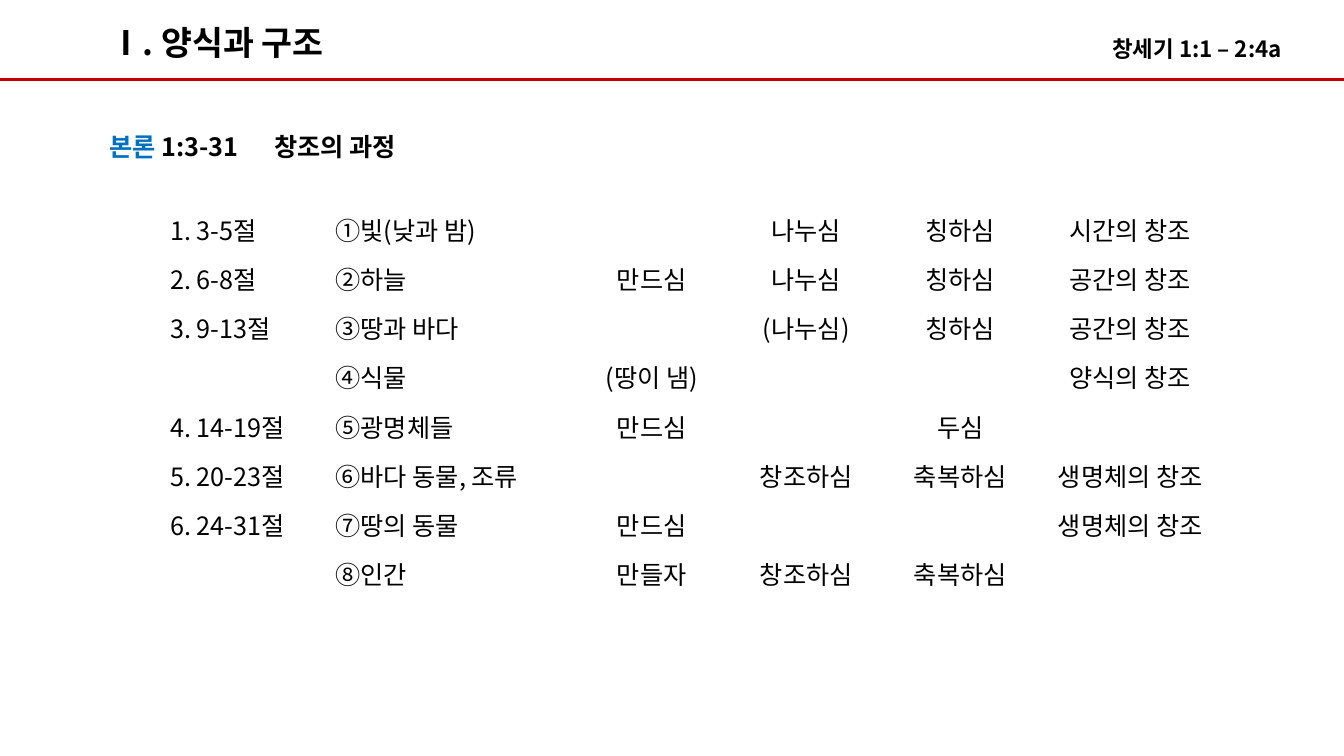
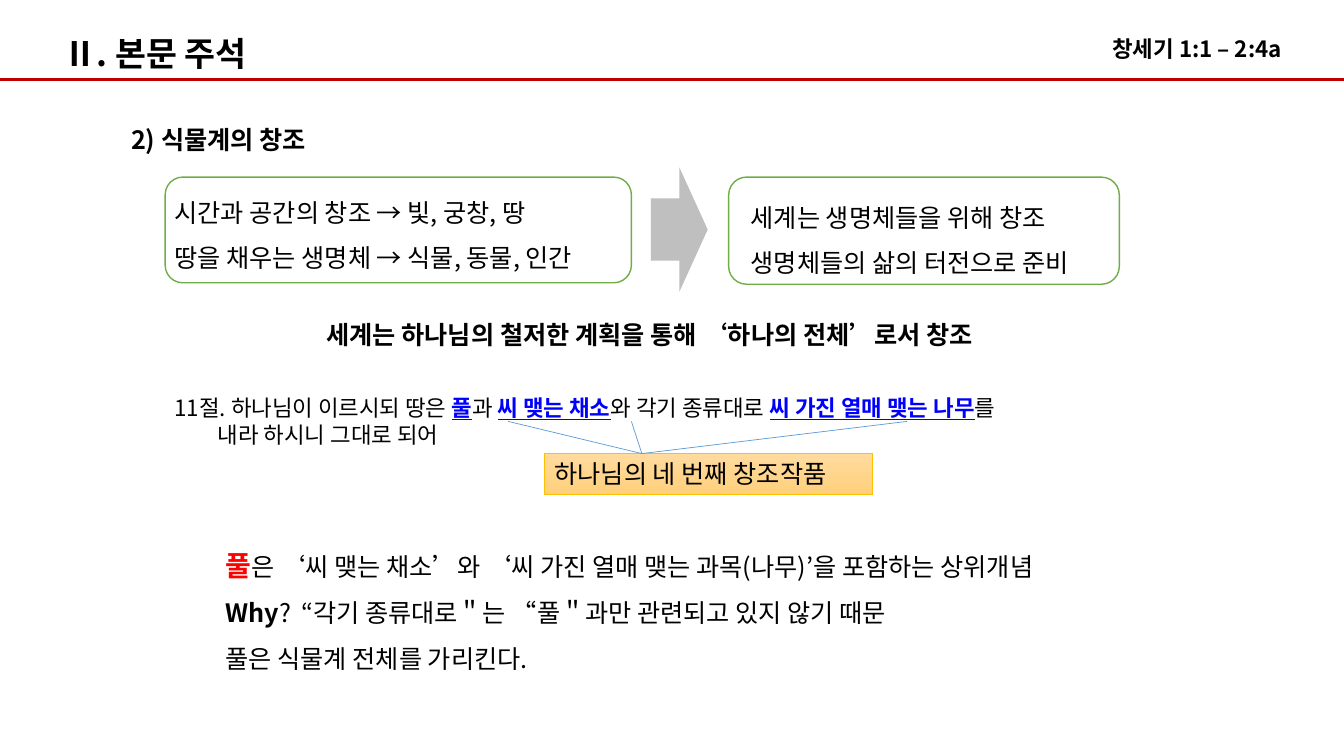
from dataclasses import dataclass

from lxml import etree
from pptx import Presentation
from pptx.dml.color import RGBColor
from pptx.enum.shapes import MSO_CONNECTOR, MSO_SHAPE
from pptx.enum.text import MSO_ANCHOR, PP_ALIGN
from pptx.oxml.ns import qn
from pptx.util import Pt

STRAIGHT = MSO_CONNECTOR.STRAIGHT
RECTANGLE = MSO_SHAPE.RECTANGLE
ROUNDED = MSO_SHAPE.ROUNDED_RECTANGLE
RIGHT_ARROW = MSO_SHAPE.RIGHT_ARROW
TOP, MIDDLE = MSO_ANCHOR.TOP, MSO_ANCHOR.MIDDLE
LEFT, CENTER = PP_ALIGN.LEFT, PP_ALIGN.CENTER


@dataclass(frozen=True)
class Theme:
    font: str = "Noto Sans CJK KR"
    ink: str = "000000"
    rule: str = "C00000"
    section: str = "0070C0"
    quoted: str = "0000FF"
    stressed: str = "FF0000"
    frame: str = "70AD47"
    arrow: str = "BFBFBF"
    pointer: str = "5B9BD5"
    note_line: str = "FFC000"
    note_fill: tuple = ("FFDB9E", "FFD07C")
    title: int = 24
    emphasis: int = 20
    body: int = 18
    small: int = 16


THEME = Theme()
BOLD = {"bold": True}
SMALL = {"size": THEME.small}
QUOTED = {"size": THEME.small, "color": THEME.quoted, "bold": True, "underline": True}

PROCESS_COLUMNS = (118, 181, 104, 117, 103, 140)
PROCESS_ROW = 35.2
PROCESS = (
    ("1. 3-5절", "①빛(낮과 밤)", "", "나누심", "칭하심", "시간의 창조"),
    ("2. 6-8절", "②하늘", "만드심", "나누심", "칭하심", "공간의 창조"),
    ("3. 9-13절", "③땅과 바다", "", "(나누심)", "칭하심", "공간의 창조"),
    ("", "④식물", "(땅이 냄)", "", "", "양식의 창조"),
    ("4. 14-19절", "⑤광명체들", "만드심", "", "두심", ""),
    ("5. 20-23절", "⑥바다 동물, 조류", "", "창조하심", "축복하심", "생명체의 창조"),
    ("6. 24-31절", "⑦땅의 동물", "만드심", "", "", "생명체의 창조"),
    ("", "⑧인간", "만들자", "창조하심", "축복하심", ""),
)


def rgb(color):
    return RGBColor.from_string(color)


def apply(target, formats):
    for name, value in formats.items():
        setattr(target, name, value)


def add_run(paragraph, text, size=THEME.body, color=THEME.ink, **formats):
    run = paragraph.add_run()
    run.text = text
    apply(run.font, {"name": THEME.font, "size": Pt(size), **formats})
    run.font.color.rgb = rgb(color)
    east_asian = etree.SubElement(run.font._element, qn("a:ea"))
    east_asian.set("typeface", THEME.font)


def write(frame, paragraphs, **formats):
    for index, runs in enumerate(paragraphs):
        paragraph = frame.add_paragraph() if index else frame.paragraphs[0]
        apply(paragraph, {"alignment": LEFT, **formats})
        for text, style in runs:
            add_run(paragraph, text, **style)


def add_text(slide, box, paragraphs, **formats):
    frame = slide.shapes.add_textbox(*map(Pt, box)).text_frame
    frame.word_wrap = True
    write(frame, paragraphs, **formats)
    return frame


def set_tab(paragraph, position):
    tabs = etree.SubElement(paragraph._p.get_or_add_pPr(), qn("a:tabLst"))
    etree.SubElement(tabs, qn("a:tab"), pos=str(Pt(position)), algn="l")


def add_panel(slide, kind, box, fill=None, line=None, width=1):
    panel = slide.shapes.add_shape(kind, *map(Pt, box))
    panel.shadow.inherit = False
    if fill:
        panel.fill.solid()
        panel.fill.fore_color.rgb = rgb(fill)
    else:
        panel.fill.background()
    if line:
        panel.line.color.rgb = rgb(line)
        panel.line.width = Pt(width)
    else:
        panel.line.fill.background()
    apply(panel.text_frame, {"word_wrap": True, "vertical_anchor": TOP})
    return panel


def add_line(slide, start, end, color, width):
    line = slide.shapes.add_connector(STRAIGHT, *map(Pt, (*start, *end)))
    line.line.color.rgb = rgb(color)
    line.line.width = Pt(width)
    etree.SubElement(line._element.spPr, qn("a:effectLst"))


def add_framed_text(slide, box, lines, left, top):
    frame = add_panel(slide, ROUNDED, box, line=THEME.frame).text_frame
    apply(frame, {"margin_left": Pt(left), "margin_top": Pt(top),
                  "margin_right": 0, "margin_bottom": 0})
    write(frame, [[(line, {})] for line in lines], line_spacing=1.5)


def add_page(deck, title, left, top):
    slide = deck.slides.add_slide(deck.slide_layouts[6])
    add_text(slide, (787.5, 12, 149, 36),
             [[("창세기 1:1 – 2:4a", {**SMALL, **BOLD})]], line_spacing=1.5)
    add_line(slide, (0, 57), (960, 57), THEME.rule, 2.25)
    add_text(slide, (left, top, 190, 36), [[(title, {"size": THEME.title, **BOLD})]])
    return slide


def add_process_table(slide):
    table = slide.shapes.add_table(
        len(PROCESS), len(PROCESS_COLUMNS), Pt(114.5), Pt(146),
        Pt(sum(PROCESS_COLUMNS)), Pt(PROCESS_ROW * len(PROCESS))).table
    apply(table, {"first_row": False, "horz_banding": False})
    for column, width in zip(table.columns, PROCESS_COLUMNS):
        column.width = Pt(width)
    for row, texts in zip(table.rows, PROCESS):
        row.height = Pt(PROCESS_ROW)
        for index, (cell, text) in enumerate(zip(row.cells, texts)):
            cell.fill.background()
            cell.vertical_anchor = MIDDLE
            if text:
                write(cell.text_frame, [[(text, {})]],
                      alignment=LEFT if index < 2 else CENTER)


def build_structure(deck):
    slide = add_page(deck, "Ⅰ. 양식과 구조", 71, 12)
    heading = add_text(slide, (71, 90, 614, 29), [[
        ("본론", {"color": THEME.section, **BOLD}),
        (" 1:3-31\t창조의 과정", BOLD)]])
    set_tab(heading.paragraphs[0], 118)
    add_process_table(slide)


def add_fourth_work(slide):
    note = add_panel(slide, RECTANGLE, (389, 324, 234, 29),
                     line=THEME.note_line, width=0.5)
    note.fill.gradient()
    note.fill.gradient_angle = 270
    for stop, color in zip(note.fill.gradient_stops, THEME.note_fill):
        stop.color.rgb = rgb(color)
    write(note.text_frame, [[("하나님의 네 번째 창조작품", {})]])
    for word in (363, 451, 648):
        add_line(slide, (word, 301), (458.5, 324), THEME.pointer, 0.5)


def build_commentary(deck):
    slide = add_page(deck, "Ⅱ. 본문 주석", 38, 20)
    add_text(slide, (86.5, 85, 170, 29), [[("2) 식물계의 창조", BOLD)]])
    add_framed_text(slide, (118, 126.5, 333, 75.5),
                    ("시간과 공간의 창조 → 빛, 궁창, 땅",
                     "땅을 채우는 생명체 → 식물, 동물, 인간"), 3, 0)
    add_framed_text(slide, (520.5, 126.5, 279, 76.5),
                    ("세계는 생명체들을 위해 창조",
                     "생명체들의 삶의 터전으로 준비"), 12, 3.5)
    add_panel(slide, RIGHT_ARROW, (465, 119.5, 40.5, 89), fill=THEME.arrow)
    add_text(slide, (226, 224.5, 518, 29),
             [[("세계는 하나님의 철저한 계획을 통해 ‘하나의 전체’로서 창조", BOLD)]])
    verse = add_text(slide, (117.5, 278, 682, 46), [
        [("11절. 하나님이 이르시되 땅은 ", SMALL), ("풀", QUOTED), ("과 ", SMALL),
         ("씨 맺는 채소", QUOTED), ("와 각기 종류대로 ", SMALL),
         ("씨 가진 열매 맺는 나무", QUOTED), ("를", SMALL)],
        [("내라 하시니 그대로 되어", SMALL)]])
    verse.paragraphs[1]._p.get_or_add_pPr().set("marL", str(Pt(31)))
    add_fourth_work(slide)
    reason = add_text(slide, (154, 376.5, 621, 109), [
        [("풀", {"size": THEME.emphasis, "color": THEME.stressed, **BOLD}),
         ("은 ‘씨 맺는 채소’와 ‘씨 가진 열매 맺는 과목(나무)’을 포함하는 상위개념", {})],
        [("Why", BOLD),
         ("?\t“각기 종류대로＂는 “풀＂과만 관련되고 있지 않기 때문", {})],
        [("풀은 식물계 전체를 가리킨다.", {})]], line_spacing=1.5)
    set_tab(reason.paragraphs[1], 54)


def main():
    deck = Presentation()
    apply(deck, {"slide_width": Pt(960), "slide_height": Pt(540)})
    build_structure(deck)
    build_commentary(deck)
    deck.save("out.pptx")


if __name__ == "__main__":
    main()
